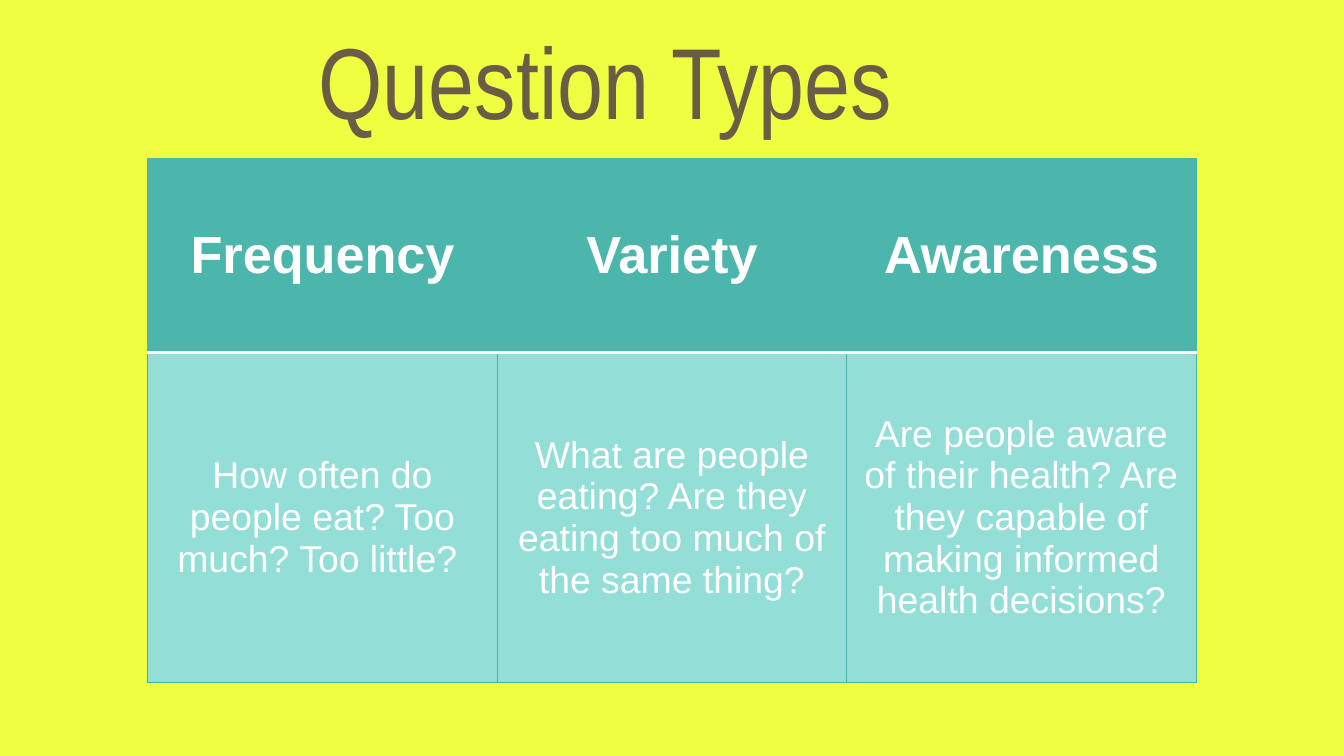
import pptx
import pptx.dml.color
import pptx.enum.text
import pptx.util
from lxml import etree
from pptx.oxml.ns import qn

Pt = pptx.util.Pt
ALIGN = pptx.enum.text.PP_ALIGN
MIDDLE = pptx.enum.text.MSO_ANCHOR.MIDDLE

HUES = {
    "back": "EEFF41",
    "title": "695D46",
    "head": "4DB6AC",
    "body": "93DFD7",
    "edge": "49B5AA",
    "text": "FFFFFF",
}

HEADS = ["Frequency", "Variety", "Awareness"]
NOTES = [
    "How often do people eat? Too much? Too little? ",
    "What are people eating? Are they eating too much of the same thing?",
    "Are people aware of their health? Are they capable of making "
    "informed health decisions?",
]


def color(name):
    return pptx.dml.color.RGBColor.from_string(HUES[name])


class Deck:
    def __init__(self, wide, high):
        self.show = pptx.Presentation()
        self.show.slide_width = Pt(wide)
        self.show.slide_height = Pt(high)
        self.slide = self.show.slides.add_slide(self.show.slide_layouts[5])
        fill = self.slide.background.fill
        fill.solid()
        fill.fore_color.rgb = color("back")

    def style(self, frame, text, face, size, hue, align, bold=False):
        frame.text = text
        for para in frame.paragraphs:
            para.alignment = align
            font = para.font
            font.name, font.size, font.bold = face, Pt(size), bold
            font.color.rgb = color(hue)

    def title(self, text, left, top, width, height):
        box = self.slide.shapes.title
        box.left, box.top = Pt(left), Pt(top)
        box.width, box.height = Pt(width), Pt(height)
        frame = box.text_frame
        frame.word_wrap = True
        frame.auto_size = pptx.enum.text.MSO_AUTO_SIZE.NONE
        frame.vertical_anchor = MIDDLE
        frame.margin_left = frame.margin_right = Pt(7.2)
        frame.margin_top = frame.margin_bottom = Pt(7.2)
        self.style(frame, text, "Arial Narrow", 54, "title", ALIGN.LEFT)

    def edges(self, cell, sides):
        """Draw the cell borders; sides maps L, R, T, B to (hue, width)."""
        props = cell._tc.get_or_add_tcPr()
        for spot, side in enumerate("LRTB"):
            hue, width = sides[side]
            line = etree.Element(qn(f"a:ln{side}"), w=str(Pt(width)))
            fill = etree.SubElement(line, qn("a:solidFill"))
            etree.SubElement(fill, qn("a:srgbClr"), val=HUES[hue])
            props.insert(spot, line)

    def cell(self, cell, text, head):
        cell.fill.solid()
        cell.fill.fore_color.rgb = color("head" if head else "body")
        cell.vertical_anchor = MIDDLE
        size = 28 if head else 20
        self.style(cell.text_frame, text, "Arial", size, "text",
                   ALIGN.CENTER, head)
        sides = dict.fromkeys("LRTB", ("edge", 0.75))
        sides["B" if head else "T"] = ("text", 2)
        self.edges(cell, sides)

    def table(self, rows, left, top, width, heights):
        count = len(rows[0])
        table = self.slide.shapes.add_table(
            len(rows), count, Pt(left), Pt(top), Pt(width), Pt(sum(heights))
        ).table
        for col in table.columns:
            col.width = Pt(width / count)
        for y, (texts, height) in enumerate(zip(rows, heights)):
            table.rows[y].height = Pt(height)
            for x, text in enumerate(texts):
                self.cell(table.cell(y, x), text, y == 0)


def main():
    deck = Deck(720, 405)
    deck.title("Question Types", 163.5, 0, 392.5, 85)
    deck.table([HEADS, NOTES], 79.2, 84.8, 561.6, [104, 177])
    deck.show.save("out.pptx")


if __name__ == "__main__":
    main()
